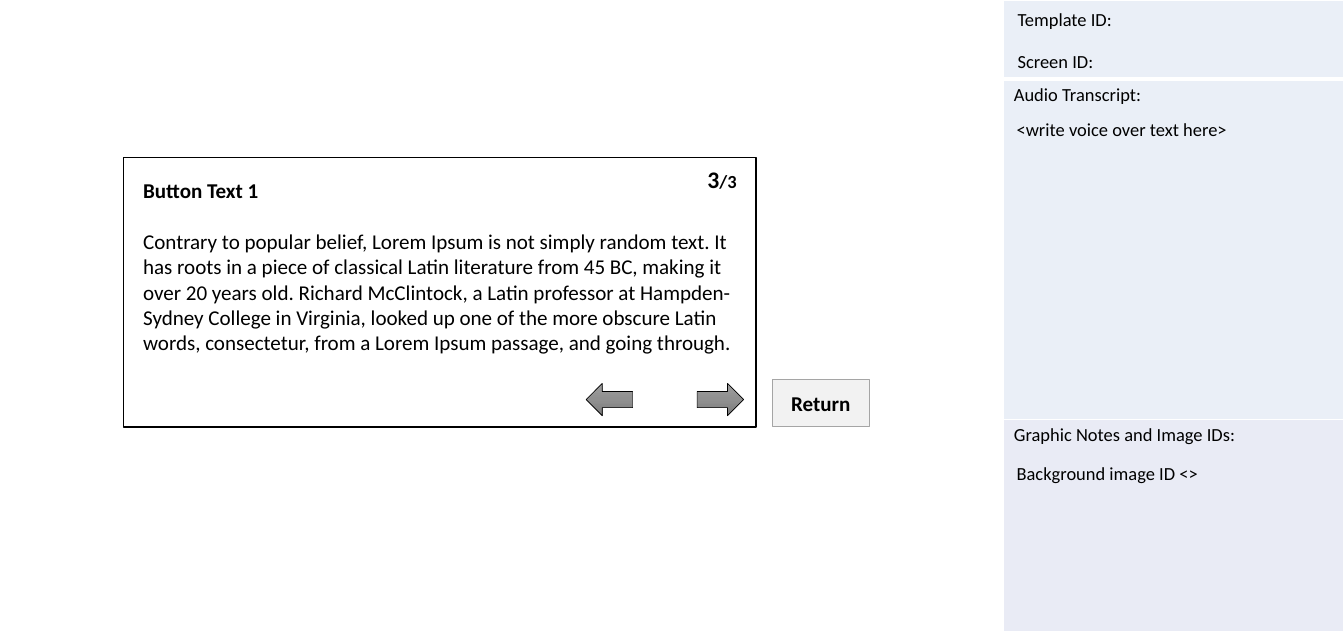
"""Build the storyboard slide with a pop-up text panel and a notes sidebar."""
from copy import deepcopy

from pptx import Presentation
from pptx.dml.color import RGBColor
from pptx.enum.shapes import MSO_SHAPE
from pptx.enum.text import MSO_ANCHOR, PP_ALIGN
from pptx.oxml import parse_xml
from pptx.oxml.ns import nsdecls, qn
from pptx.util import Pt

PX = 9144
COLORS = {
    "white": "FFFFFF", "black": "000000", "band": "EAEFF7", "notes": "E9EBF5",
    "button": "F2F2F2", "button_line": "A5A5A5",
    "arrow_top": "9D9D9D", "arrow_mid": "909090", "arrow_end": "7C7C7C",
}


def color(name):
    return RGBColor.from_string(COLORS[name])


def add_run(p, text, size, bold=False):
    r = p.add_run()
    r.text = text
    r.font.color.rgb = color("black")
    for key, value in {"name": "Calibri", "size": Pt(size), "bold": bold}.items():
        setattr(r.font, key, value)


prs = Presentation()
prs.slide_width, prs.slide_height = 1417 * PX, 669 * PX
s = prs.slides.add_slide(prs.slide_layouts[6])

sidebar = [
    (83, "", "band", 3),
    (359, "Audio Transcript:", "band", 1),
    (223, "Graphic Notes and Image IDs:", "notes", 1),
]
table = s.shapes.add_table(len(sidebar), 1, 1058 * PX, 0, 359 * PX, 665 * PX).table
table.first_row = table.horz_banding = False
above = 1
for i, (height, text, fill, below) in enumerate(sidebar):
    table.rows[i].height = height * PX
    cell = table.cell(i, 0)
    cell.margin_left = cell.margin_right = 11 * PX
    cell.margin_top = cell.margin_bottom = 5 * PX
    for side, width in (("L", 1), ("R", 1), ("T", above), ("B", below)):
        cell._tc.get_or_add_tcPr().append(parse_xml(
            f'<a:ln{side} {nsdecls("a")} w="{Pt(width)}"><a:solidFill>'
            f'<a:srgbClr val="{COLORS["white"]}"/></a:solidFill></a:ln{side}>'))
    above = below
    cell.fill.solid()
    cell.fill.fore_color.rgb = color(fill)
    if text:
        add_run(cell.text_frame.paragraphs[0], text, 14)

labels = [
    (1063, 48, 382, "Screen ID:"),
    (1063, 4, 382, "Template ID:"),
    (1062, 119, 356, "<write voice over text here>"),
    (1062, 482, 356, "Background image ID <>"),
]
for x, y, w, text in labels:
    tf = s.shapes.add_textbox(x * PX, y * PX, w * PX, 34 * PX).text_frame
    tf.word_wrap = True
    add_run(tf.paragraphs[0], text, 14)

boxes = [
    (130, 166, 667, 284, "white", "black", 1, (21, 21), MSO_ANCHOR.TOP, PP_ALIGN.LEFT, [
        ("Button Text 1", True),
        ("Contrary to popular belief, Lorem Ipsum is not simply random text. It has roots "
         "in a piece of classical Latin literature from 45 BC, making it over 20 years old. "
         "Richard McClintock, a Latin professor at Hampden-Sydney College in Virginia, "
         "looked up one of the more obscure Latin words, consectetur, from a Lorem Ipsum "
         "passage, and going through.", False),
    ]),
    (814, 400, 103, 49, "button", "button_line", 0.5, (0, 5), MSO_ANCHOR.MIDDLE,
     PP_ALIGN.CENTER, [("Return", True)]),
]
for x, y, w, h, fill, line, width, (mx, my), anchor, align, paragraphs in boxes:
    sp = s.shapes.add_shape(MSO_SHAPE.RECTANGLE, x * PX, y * PX, w * PX, h * PX)
    sp.shadow.inherit = False
    sp.fill.solid()
    sp.fill.fore_color.rgb = color(fill)
    sp.line.color.rgb = color(line)
    sp.line.width = Pt(width)
    tf = sp.text_frame
    for key, value in {"word_wrap": True, "vertical_anchor": anchor,
                       "margin_left": mx * PX, "margin_right": mx * PX,
                       "margin_top": my * PX, "margin_bottom": my * PX}.items():
        setattr(tf, key, value)
    for i, (text, bold) in enumerate(paragraphs):
        p = tf.add_paragraph() if i else tf.paragraphs[0]
        p.alignment = align
        if i:
            p.space_before = Pt(19.5)
        add_run(p, text, 16, bold)

tf = s.shapes.add_textbox(736 * PX, 169 * PX, 51 * PX, 40 * PX).text_frame
tf.word_wrap = False
for text, size in (("3", 18), ("/3", 14)):
    add_run(tf.paragraphs[0], text, size, True)

for shape, x in ((MSO_SHAPE.RIGHT_ARROW, 735), (MSO_SHAPE.LEFT_ARROW, 618)):
    sp = s.shapes.add_shape(shape, x * PX, 404 * PX, 49 * PX, 34 * PX)
    sp.shadow.inherit = False
    sp.line.color.rgb = color("black")
    sp.line.width = Pt(0.5)
    sp.fill.gradient()
    sp.fill.gradient_angle = 270
    stops = sp._element.spPr.find(".//" + qn("a:gsLst"))
    stops.insert(1, deepcopy(stops[0]))
    for i, name in enumerate(("arrow_top", "arrow_mid", "arrow_end")):
        stop = sp.fill.gradient_stops[i]
        stop.position = i / 2
        stop.color.rgb = color(name)

prs.save("out.pptx")
